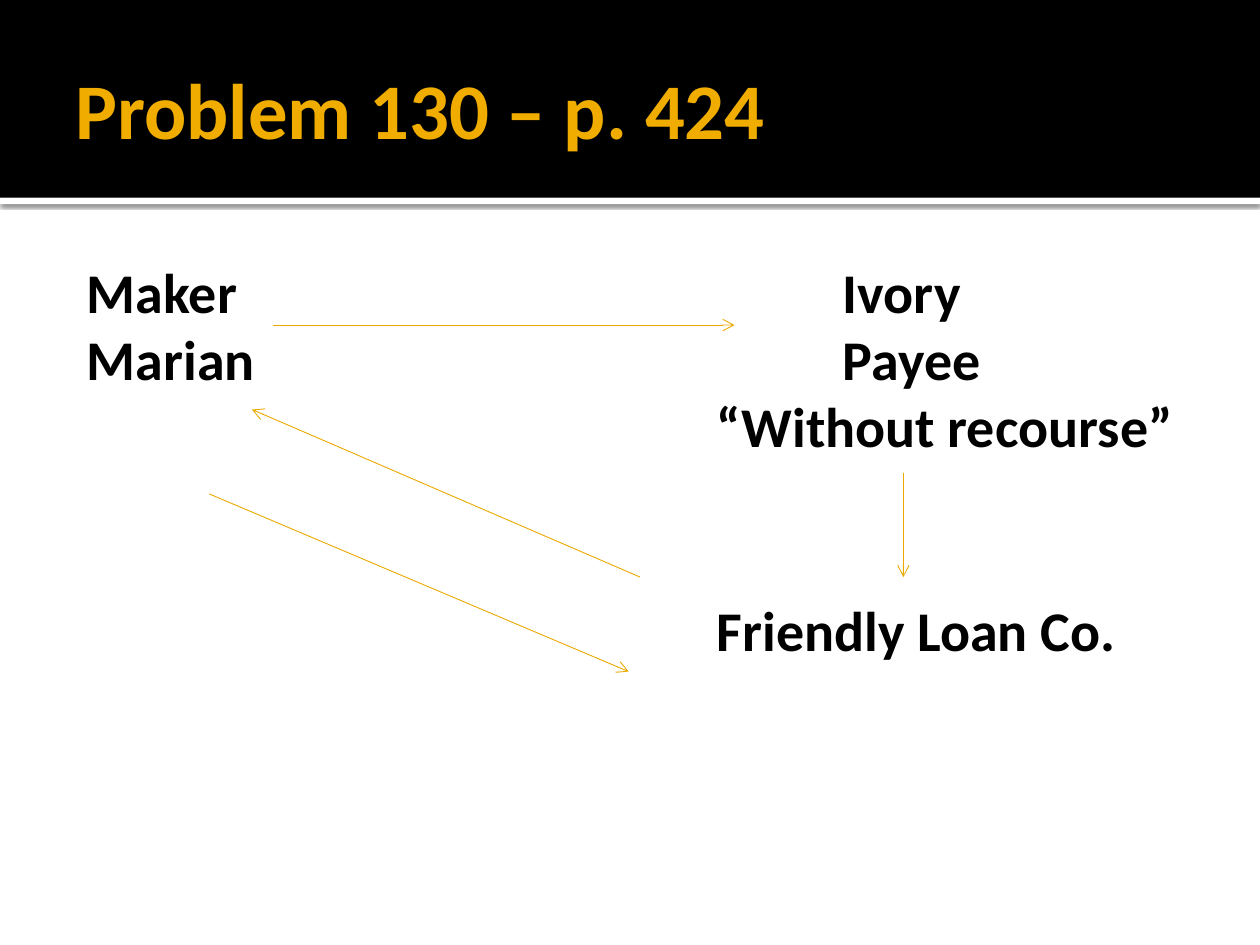
"""Builds the Problem 130 slide: a note passing between maker, payee and lender."""
import pptx
import pptx.dml.color
import pptx.enum.shapes
import pptx.enum.text
import pptx.oxml
import pptx.oxml.ns
import pptx.util

Inches = pptx.util.Inches
Pt = pptx.util.Pt
FONT = "Calibri"
COLORS = {"black": "000000", "white": "FFFFFF", "title": "F0AD00", "arrow": "EBA900"}
NAMESPACE = pptx.oxml.ns.nsdecls("a")
BAND_SHADOW = (
    f'<a:effectLst {NAMESPACE}><a:outerShdw blurRad="{Pt(2.5)}" dist="{Pt(0.8)}" '
    f'dir="5400000" rotWithShape="0"><a:srgbClr val="{COLORS["black"]}">'
    '<a:alpha val="60000"/></a:srgbClr></a:outerShdw></a:effectLst>'
)


def color(name):
    return pptx.dml.color.RGBColor.from_string(COLORS[name])


def add_band(page, top, height, fill):
    band = page.shapes.add_shape(
        pptx.enum.shapes.MSO_SHAPE.RECTANGLE, 0, Inches(top), Inches(10), Inches(height))
    band.shadow.inherit = False
    band.fill.solid()
    band.fill.fore_color.rgb = color(fill)
    band.line.fill.background()
    return band


def add_shadow(shape):
    properties = shape._element.spPr
    properties.remove(properties.find(pptx.oxml.ns.qn("a:effectLst")))
    properties.append(pptx.oxml.parse_xml(BAND_SHADOW))


def add_box(page, place, insets, anchor):
    box = page.shapes.add_textbox(*map(Inches, place))
    frame = box.text_frame
    frame.word_wrap = True
    frame.vertical_anchor = anchor
    frame.margin_left, frame.margin_top, frame.margin_right, frame.margin_bottom = map(
        Inches, insets)
    return frame


def add_span(para, text, size, fill):
    span = para.add_run()
    span.text = text
    span.font.name = FONT
    span.font.size = Pt(size)
    span.font.bold = True
    span.font.color.rgb = color(fill)


def add_tab_stop(para, position):
    para._p.get_or_add_pPr().append(pptx.oxml.parse_xml(
        f'<a:tabLst {NAMESPACE}><a:tab pos="{Inches(position)}" algn="l"/></a:tabLst>'))


def add_parties(page):
    frame = add_box(page, (0.5, 1.94, 9, 5.06), (0.19, 0.1, 0.1, 0.05),
                    pptx.enum.text.MSO_ANCHOR.TOP)
    rows = [
        ("Maker", "Ivory", 6, 0),
        ("Marian", "Payee", 6, 0),
        ("", "“Without recourse”", 5, 0),
        ("", "Friendly Loan Co.", 5, 78),
    ]
    for index, (left, right, stop, gap) in enumerate(rows):
        para = frame.add_paragraph() if index else frame.paragraphs[0]
        para.space_before = Pt(gap)
        add_tab_stop(para, stop)
        add_span(para, f"{left}\t{right}", 32, "black")


def add_arrow(page, start, end):
    arrow = page.shapes.add_connector(
        pptx.enum.shapes.MSO_CONNECTOR.STRAIGHT, *map(Inches, start + end))
    arrow.line.color.rgb = color("arrow")
    arrow.line.width = Pt(0.5)
    arrow.line._get_or_add_ln().append(
        pptx.oxml.parse_xml(f'<a:tailEnd {NAMESPACE} type="arrow"/>'))
    arrow._element.spPr.append(pptx.oxml.parse_xml(f"<a:effectLst {NAMESPACE}/>"))


def main():
    deck = pptx.Presentation()
    deck.slide_width, deck.slide_height = Inches(10), Inches(7.5)
    page = deck.slides.add_slide(deck.slide_layouts[6])
    add_shadow(add_band(page, 1.57, 0.05, "white"))
    add_band(page, 0, 1.57, "black")
    title = add_box(page, (0.5, 0.17, 9, 1.37), (0.1, 0.05, 0.05, 0.05),
                    pptx.enum.text.MSO_ANCHOR.MIDDLE)
    add_span(title.paragraphs[0], "Problem 130 – p. 424", 45, "title")
    add_parties(page)
    for start, end in [
        ((2.17, 2.58), (5.83, 2.58)),
        ((7.17, 3.75), (7.17, 4.58)),
        ((5.08, 4.58), (2, 3.25)),
        ((1.66, 3.92), (4.99, 5.33)),
    ]:
        add_arrow(page, start, end)
    deck.save("out.pptx")


if __name__ == "__main__":
    main()
